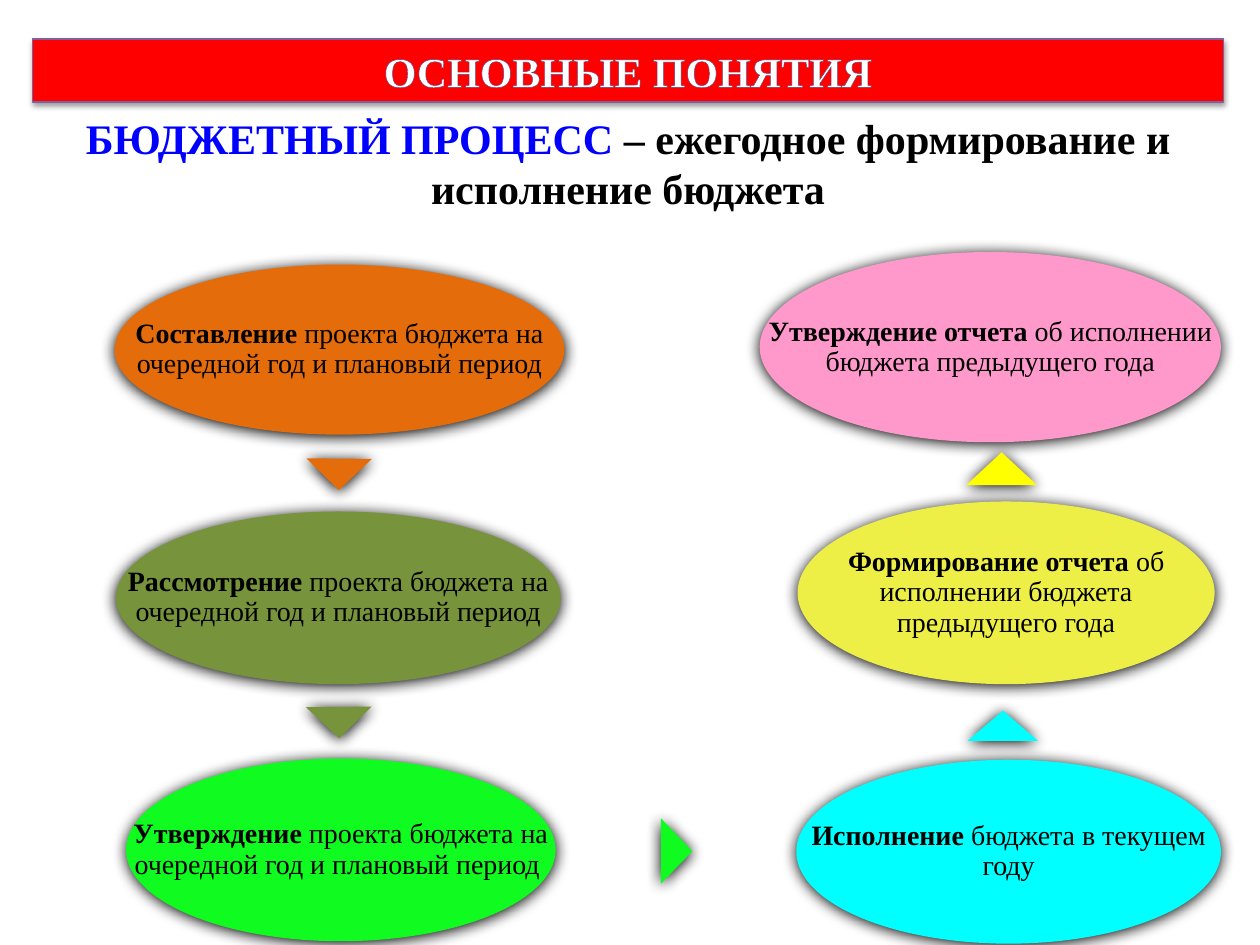
from dataclasses import dataclass

from lxml import etree
from pptx import Presentation
from pptx.dml.color import RGBColor
from pptx.enum.shapes import MSO_SHAPE
from pptx.enum.text import MSO_ANCHOR, PP_ALIGN
from pptx.oxml.ns import qn
from pptx.util import Inches, Pt

OVAL = MSO_SHAPE.OVAL
TRIANGLE = MSO_SHAPE.ISOSCELES_TRIANGLE
CENTER = PP_ALIGN.CENTER
MIDDLE = MSO_ANCHOR.MIDDLE


@dataclass(frozen=True)
class Theme:
    font: str = "Times New Roman"
    heading_size: int = 24
    step_size: int = 16
    text: str = "000000"
    banner: str = "FF0000"
    banner_line: str = "7D60A0"
    banner_text: str = "FFFFFF"
    banner_text_line: str = "5E457C"
    term: str = "0000FF"
    drafting: str = "E46C0A"
    review: str = "77933C"
    approval: str = "10FC21"
    execution: str = "00FFFF"
    reporting: str = "EEEF46"
    reporting_arrow: str = "FFFF00"
    report_approval: str = "FF99CC"


theme = Theme()


def add_shadow(shape, opacity, blur, distance):
    effects = etree.SubElement(shape._element.spPr, qn("a:effectLst"))
    shadow = etree.SubElement(
        effects, qn("a:outerShdw"), blurRad=str(Pt(blur)), dist=str(Pt(distance)),
        dir="5400000", algn="ctr", rotWithShape="0")
    color = etree.SubElement(shadow, qn("a:srgbClr"), val="000000")
    etree.SubElement(color, qn("a:alpha"), val=str(opacity * 1000))


def write_paragraph(frame, parts, size):
    frame.word_wrap = True
    para = frame.paragraphs[0]
    para.alignment = CENTER
    para.font.name = theme.font
    para.font.size = Pt(size)
    for text, color, bold in parts:
        span = para.add_run()
        span.text = text
        span.font.bold = bold
        span.font.color.rgb = RGBColor.from_string(color)
    return para


deck = Presentation()
deck.slide_width = Inches(10)
deck.slide_height = Inches(7.5)
page = deck.slides.add_slide(deck.slide_layouts[5])

banner = page.shapes.title
banner.left, banner.top, banner.width, banner.height = map(Inches, (0.26, 0.31, 9.45, 0.5))
banner.fill.solid()
banner.fill.fore_color.rgb = RGBColor.from_string(theme.banner)
banner.line.color.rgb = RGBColor.from_string(theme.banner_line)
banner.line.width = Pt(0.75)
add_shadow(banner, 38, 3.1, 1.6)
banner.text_frame.vertical_anchor = MIDDLE
heading = write_paragraph(
    banner.text_frame, [("ОСНОВНЫЕ ПОНЯТИЯ", theme.banner_text, True)], theme.heading_size)
outline = etree.Element(qn("a:ln"), w=str(Pt(0.71)))
outline_fill = etree.SubElement(outline, qn("a:solidFill"))
etree.SubElement(outline_fill, qn("a:srgbClr"), val=theme.banner_text_line)
heading.runs[0].font._element.insert(0, outline)

definition = page.shapes.add_textbox(Inches(0.26), Inches(0.84), Inches(9.45), Inches(0.91))
write_paragraph(definition.text_frame, [
    ("БЮДЖЕТНЫЙ ПРОЦЕСС ", theme.term, True),
    ("– ежегодное формирование и исполнение бюджета", theme.text, True),
], theme.heading_size)

arrows = [
    ((2.43, 3.64, 0.52, 0.25), 180.5, theme.drafting),
    ((2.43, 5.61, 0.52, 0.25), 179.5, theme.review),
    ((5.11, 6.63, 0.52, 0.25), 90.1, theme.approval),
    ((7.68, 5.64, 0.56, 0.24), 0.2, theme.execution),
    ((7.67, 3.59, 0.56, 0.26), 0, theme.reporting_arrow),
]
steps = [
    ((0.91, 2.1, 3.57, 1.35), theme.drafting,
     "Составление", " проекта бюджета на очередной год и плановый период"),
    ((0.92, 4.06, 3.53, 1.37), theme.review,
     "Рассмотрение ", "проекта бюджета на очередной год и плановый период"),
    ((1, 6.02, 3.41, 1.45), theme.approval,
     "Утверждение", " проекта бюджета на очередной год и плановый период "),
    ((6.32, 6.03, 3.37, 1.46), theme.execution,
     "Исполнение ", "бюджета в текущем году"),
    ((6.33, 3.98, 3.31, 1.45), theme.reporting,
     "Формирование отчета ", "об исполнении бюджета предыдущего года"),
    ((6.03, 2, 3.66, 1.51), theme.report_approval,
     "Утверждение отчета ", "об исполнении бюджета предыдущего года"),
]

figures = [(OVAL, place, 0, color) for place, color, *_ in steps]
figures += [(TRIANGLE, *arrow) for arrow in arrows]
for kind, place, rotation, color in figures:
    figure = page.shapes.add_shape(kind, *map(Inches, place))
    figure.rotation = rotation
    figure.fill.solid()
    figure.fill.fore_color.rgb = RGBColor.from_string(color)
    figure.line.fill.background()
    add_shadow(figure, 100, 8.5, 1)

for place, color, action, details in steps:
    label = page.shapes.add_textbox(*map(Inches, place))
    frame = label.text_frame
    frame.vertical_anchor = MIDDLE
    frame.margin_left = frame.margin_right = Inches(0.02)
    frame.margin_top = frame.margin_bottom = Inches(0.02)
    para = write_paragraph(
        frame, [(action, theme.text, True), (details, theme.text, False)], theme.step_size)
    para.line_spacing = 0.9

deck.save("out.pptx")
